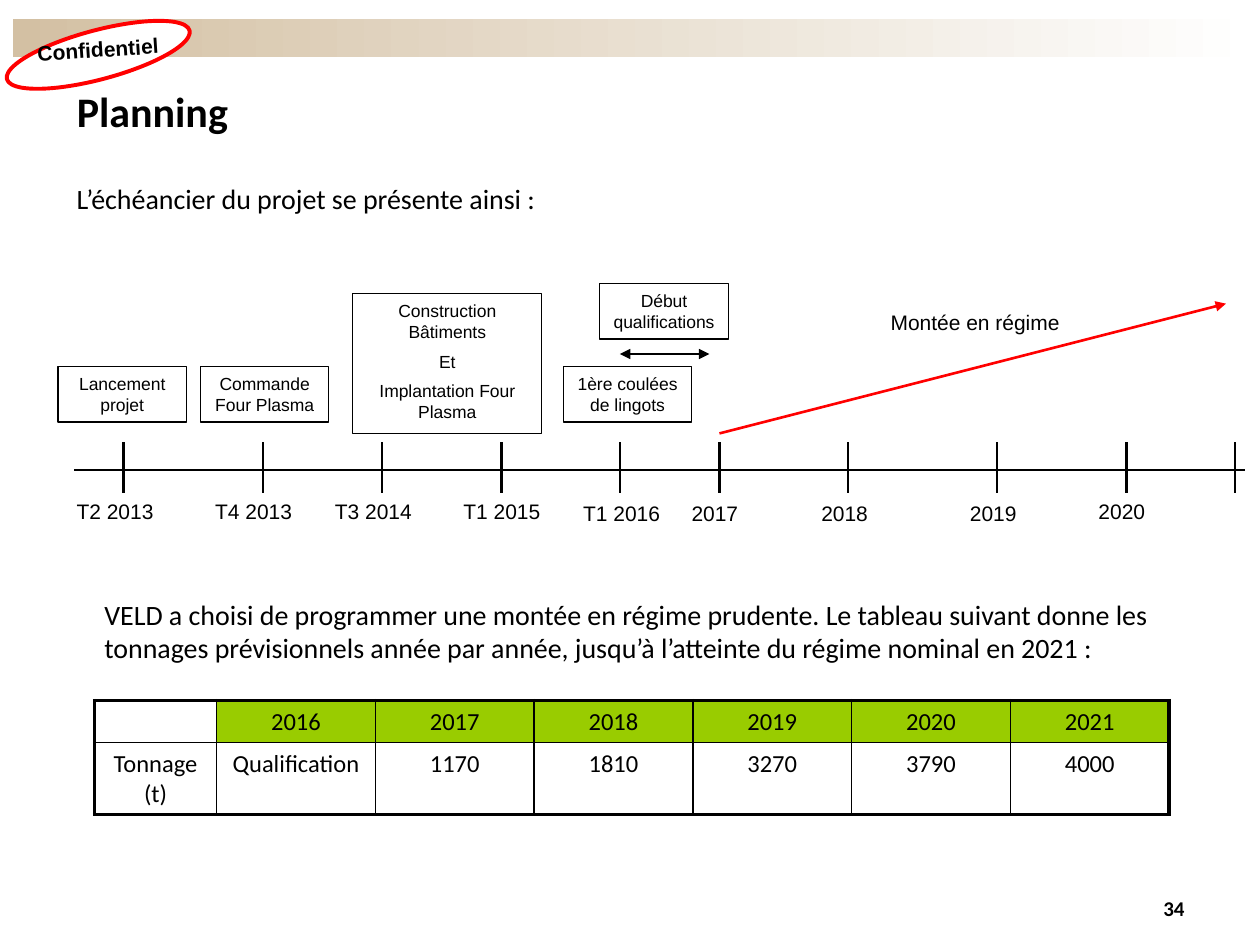
"""Build the project planning slide with its timeline and tonnage table."""
from lxml.etree import SubElement
from pptx import Presentation
from pptx.dml.color import RGBColor
from pptx.enum.shapes import MSO_CONNECTOR, MSO_SHAPE
from pptx.enum.text import MSO_ANCHOR, PP_ALIGN
from pptx.oxml.ns import qn
from pptx.util import Inches, Pt

COLORS = {"black": "000000", "white": "FFFFFF", "red": "FF0000", "sand": "D3C0A3", "green": "99CC00"}
RGB = {name: RGBColor.from_string(value) for name, value in COLORS.items()}


def add_text(tf, lines, size, font="Arial", align=PP_ALIGN.LEFT, bold=False, gap=0):
    tf.word_wrap = True
    for i, line in enumerate(lines):
        p = tf.paragraphs[0] if i == 0 else tf.add_paragraph()
        p.text = line
        p.alignment = align
        p.space_before = Pt(gap if i else 0)
        p.font.size = Pt(size)
        p.font.name = font
        p.font.bold = bold
        p.font.color.rgb = RGB["black"]


def add_line(x1, y1, x2, y2, width, color="black", arrows=()):
    c = s.shapes.add_connector(MSO_CONNECTOR.STRAIGHT, Inches(x1), Inches(y1), Inches(x2), Inches(y2))
    c.line.color.rgb = RGB[color]
    c.line.width = Pt(width)
    for end in arrows:
        SubElement(c.line._get_or_add_ln(), qn(f"a:{end}"), type="triangle")
    SubElement(c._element.spPr, qn("a:effectLst"))


prs = Presentation()
prs.slide_width, prs.slide_height = Inches(10), Inches(7.5)
s = prs.slides.add_slide(prs.slide_layouts[5])

banner = s.shapes.add_shape(MSO_SHAPE.RECTANGLE, Inches(0.1), Inches(0.15), Inches(9.88), Inches(0.3))
banner.shadow.inherit = False
banner.line.fill.background()
banner.fill.gradient()
banner.fill.gradient_angle = 0
for stop, color in zip(banner.fill.gradient_stops, ("sand", "white")):
    stop.color.rgb = RGB[color]

stamp = s.shapes.add_shape(MSO_SHAPE.OVAL, Inches(0.03), Inches(0.24), Inches(1.5), Inches(0.39))
stamp.shadow.inherit = False
stamp.rotation = 345.1
stamp.fill.solid()
stamp.fill.fore_color.rgb = RGB["white"]
stamp.line.color.rgb = RGB["red"]
stamp.line.width = Pt(2.25)

title = s.shapes.title
title.left, title.top, title.width, title.height = Inches(0.51), Inches(0.52), Inches(9), Inches(0.71)
title.text_frame.vertical_anchor = MSO_ANCHOR.MIDDLE
add_text(title.text_frame, ["Planning"], 24, "Calibri", bold=True)

texts = [
    (0.18, 0.24, 1.2, 0.37, "Confidentiel", 12, "Arial", PP_ALIGN.CENTER, True, 356.3),
    (8.86, 7.06, 0.64, 0.29, "34", 12, "Calibri", PP_ALIGN.RIGHT, True, 0),
    (0.51, 1.39, 9, 0.41, "L’échéancier du projet se présente ainsi :", 16, "Calibri", PP_ALIGN.LEFT, False, 0),
    (0.73, 4.69, 8.75, 0.71, "VELD a choisi de programmer une montée en régime prudente. Le tableau suivant "
     "donne les tonnages prévisionnels année par année, jusqu’à l’atteinte du régime nominal en 2021 :",
     16, "Calibri", PP_ALIGN.LEFT, False, 0),
    (6.97, 2.41, 1.65, 0.3, "Montée en régime", 12, "Arial", PP_ALIGN.LEFT, False, 0),
]
for x, y, w, h, text, size, font, align, bold, angle in texts:
    tb = s.shapes.add_textbox(Inches(x), Inches(y), Inches(w), Inches(h))
    tb.rotation = angle
    add_text(tb.text_frame, [text], size, font, align, bold)

dates = [
    (0.51, 3.91, "T2 2013"), (1.61, 3.91, "T4 2013"), (2.56, 3.91, "T3 2014"),
    (3.58, 3.91, "T1 2015"), (4.53, 3.92, "T1 2016"), (5.39, 3.92, "2017"),
    (6.42, 3.92, "2018"), (7.6, 3.92, "2019"), (8.62, 3.91, "2020"),
]
for x, y, text in dates:
    tb = s.shapes.add_textbox(Inches(x), Inches(y), Inches(0.87), Inches(0.3))
    add_text(tb.text_frame, [text], 12)

for x in (0.98, 2.09, 3.03, 3.98, 4.92, 5.71, 6.73, 7.91, 8.94, 9.8):
    add_line(x, 3.91, x, 3.51, 1.25)
add_line(0.59, 3.73, 9.88, 3.73, 0.75)
add_line(5.71, 3.44, 9.73, 2.41, 1.5, "red", ["tailEnd"])
add_line(4.92, 2.81, 5.63, 2.81, 0.75, arrows=["headEnd", "tailEnd"])

milestones = [
    (0.46, 2.91, 1.02, 0.44, ["Lancement projet"]),
    (1.59, 2.91, 1.02, 0.44, ["Commande Four Plasma"]),
    (2.8, 2.33, 1.5, 1.11, ["Construction Bâtiments", "Et", "Implantation Four Plasma"]),
    (4.47, 2.91, 1.02, 0.44, ["1ère coulées de lingots"]),
    (4.76, 2.25, 1.02, 0.44, ["Début qualifications"]),
]
for x, y, w, h, lines in milestones:
    box = s.shapes.add_shape(MSO_SHAPE.RECTANGLE, Inches(x), Inches(y), Inches(w), Inches(h))
    box.shadow.inherit = False
    box.fill.background()
    box.line.color.rgb = RGB["black"]
    box.line.width = Pt(0.75)
    box.text_frame.vertical_anchor = MSO_ANCHOR.TOP
    add_text(box.text_frame, lines, 10, align=PP_ALIGN.CENTER, gap=5)

rows = [
    ["", "2016", "2017", "2018", "2019", "2020", "2021"],
    ["Tonnage (t)", "Qualification", "1170", "1810", "3270", "3790", "4000"],
]
last = len(rows[0]) - 1
table = s.shapes.add_table(2, last + 1, Inches(0.75), Inches(5.56), Inches(8.55), Inches(0.9)).table
for i, column in enumerate(table.columns):
    column.width = Inches(1.26 if i else 0.97)
for row, height in zip(table.rows, (0.33, 0.57)):
    row.height = Inches(height)
for i, row in enumerate(rows):
    for j, text in enumerate(row):
        cell = table.cell(i, j)
        add_text(cell.text_frame, [text], 14, "Calibri", PP_ALIGN.CENTER)
        tcPr = cell._tc.get_or_add_tcPr()
        edges = {"lnL": j == 0, "lnR": j == last, "lnT": i == 0, "lnB": i == 1}
        for side, outer in edges.items():
            ln = SubElement(tcPr, qn(f"a:{side}"), w=str(Pt(2.25 if outer else 1)))
            SubElement(SubElement(ln, qn("a:solidFill")), qn("a:srgbClr"), val=COLORS["black"])
        if i == 0 and j > 0:
            cell.fill.solid()
            cell.fill.fore_color.rgb = RGB["green"]
        else:
            cell.fill.background()

prs.save("out.pptx")
